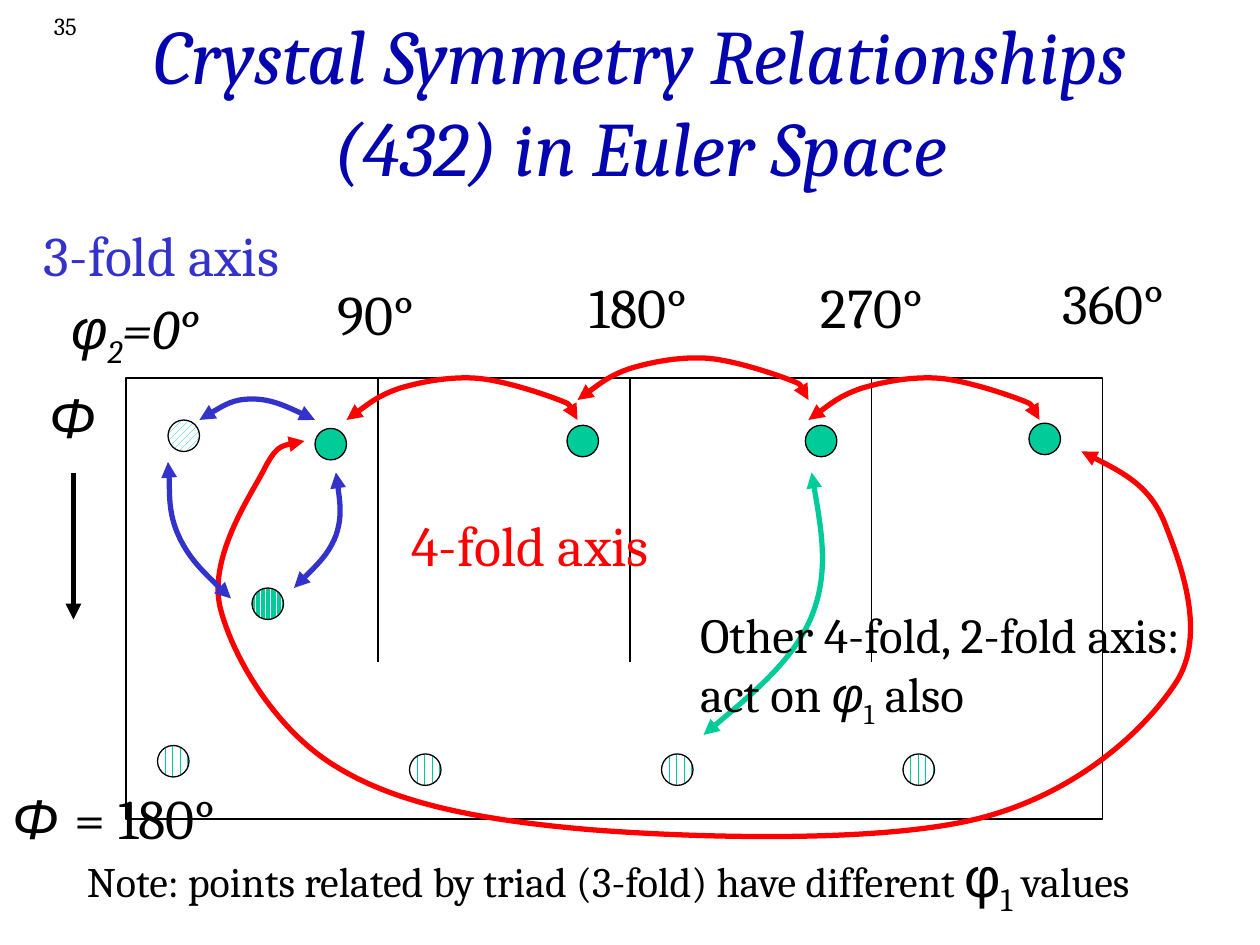
from lxml.etree import SubElement
from pptx import Presentation
from pptx.dml.color import RGBColor
from pptx.enum.dml import MSO_PATTERN
from pptx.enum.shapes import MSO_CONNECTOR, MSO_SHAPE
from pptx.enum.text import MSO_ANCHOR, MSO_AUTO_SIZE, PP_ALIGN
from pptx.oxml.ns import qn
from pptx.util import Inches, Pt

COLORS = {"black": "000000", "title": "0405AE", "fourfold": "FF0000",
          "threefold": "3333CC", "point": "00CC99", "white": "FFFFFF"}
SERIF, SANS = "Cambria", "Arial"
CELL = Inches(10) / 120  # the slide is a grid of 120 columns by 90 rows

# One hop of the 4-fold axis, relative to its start: a start, then Bezier triples
HOP = [(0, 0), (1.5, -1.1), (3, -2.3), (5, -3), (7, -3.6), (9.5, -4.1), (12, -4),
       (14.5, -3.9), (18.4, -2.6), (20, -2), (21.6, -1.4), (21.8, -0.6), (22, 0)]
HOP_STARTS = [(33, 40), (55, 38.1), (77, 40)]
RETURN_LOOP = [(103, 43), (106.2, 44.6), (109.6, 46.3), (111, 50), (112.4, 53.6),
               (115, 60.4), (112, 65), (109, 69.6), (102.4, 75.7), (93, 78),
               (83.6, 80.3), (66.1, 79.8), (56, 79), (45.8, 78.1), (37.8, 76.6),
               (32, 73), (26.2, 69.5), (22.2, 62.6), (21, 58), (19.8, 53.3),
               (23.6, 47.6), (25, 45), (26.3, 42.4), (27.7, 42.1), (29, 42)]
TRIAD = [
    [(22, 57), (20, 55.1), (18, 53.2), (17, 51), (16, 48.8), (16.2, 45.1), (16, 44)],
    [(28, 56), (29.6, 54.4), (31.3, 52.8), (32, 51), (32.6, 49.2), (32.3, 47), (32, 45)],
    [(19, 40), (20.6, 39), (22.2, 38), (24, 38), (25.8, 38), (28, 39), (30, 40)],
]
OTHER_AXIS = [(67, 70), (71.3, 66.4), (75.6, 62.8), (77.3, 58.7),
              (79, 54.5), (78.1, 49.7), (77.3, 45)]


def grid(*cells):
    return [round(cell * CELL) for cell in cells]


def rgb(name):
    return RGBColor.from_string(COLORS[name])


def set_line(item, color, width):
    item.line.color.rgb = rgb(color)
    item.line.width = Pt(width)


def add_arrowheads(item, *ends):
    outline = item._element.spPr.find(qn("a:ln"))
    for end in ends:
        SubElement(outline, qn(f"a:{end}"), type="triangle")


def add_run(paragraph, text, size, color="black", font=SERIF, italic=False, sub=False):
    run = paragraph.add_run()
    run.text = text
    run.font.size = Pt(size)
    run.font.name = font
    run.font.italic = italic
    run.font.color.rgb = rgb(color)
    if sub:
        run._r.get_or_add_rPr().set("baseline", "-25000")


def add_label(slide, box, *runs):
    """Each run is (text, size, options); None is a line break."""
    frame = slide.shapes.add_textbox(*grid(*box)).text_frame
    frame.word_wrap = False
    frame.auto_size = MSO_AUTO_SIZE.SHAPE_TO_FIT_TEXT
    paragraph = frame.paragraphs[0]
    for run in runs:
        if run is None:
            paragraph.add_line_break()
        else:
            text, size, options = run
            add_run(paragraph, text, size, **options)
    return paragraph


def add_straight(slide, start, end, width=0.75):
    line = slide.shapes.add_connector(MSO_CONNECTOR.STRAIGHT, *grid(*start, *end))
    set_line(line, "black", width)
    SubElement(line._element.spPr, qn("a:effectLst"))
    return line


def add_point(slide, left, top, pattern=None):
    point = slide.shapes.add_shape(MSO_SHAPE.OVAL, *grid(left, top, 3, 3))
    point.shadow.inherit = False
    set_line(point, "black", 0.75)
    if pattern is None:
        point.fill.solid()
    else:
        point.fill.patterned()
        point.fill.pattern = pattern
        point.fill.back_color.rgb = rgb("white")
    point.fill.fore_color.rgb = rgb("point")


def add_curve(slide, nodes, color):
    """Draw a double-headed curve; every three nodes after the first are one Bezier."""
    start, *rest = [grid(*node) for node in nodes]
    builder = slide.shapes.build_freeform(*start)
    builder.add_line_segments(rest, close=False)
    curve = builder.convert_to_shape()
    curve.shadow.inherit = False
    curve.fill.background()
    set_line(curve, color, 3)
    add_arrowheads(curve, "headEnd", "tailEnd")
    # Turn the straight segments into cubic ones
    outline = curve._element.spPr.find(".//" + qn("a:path"))
    segments = outline.findall(qn("a:lnTo"))
    for first in range(0, len(segments), 3):
        bezier = SubElement(outline, qn("a:cubicBezTo"))
        for segment in segments[first:first + 3]:
            bezier.append(segment[0])
            outline.remove(segment)


def add_heading(slide):
    number = add_label(slide, (0.5, 0.5, 8, 4), ("35", 14, {}))
    number.alignment = PP_ALIGN.RIGHT
    title = slide.shapes.title
    title.left, title.top, title.width, title.height = grid(10, 2, 102, 15)
    frame = title.text_frame
    frame.word_wrap = True
    frame.auto_size = MSO_AUTO_SIZE.NONE
    frame.vertical_anchor = MSO_ANCHOR.MIDDLE
    frame.paragraphs[0].alignment = PP_ALIGN.CENTER
    add_run(frame.paragraphs[0], "Crystal Symmetry Relationships (432) in Euler Space",
            44, "title", italic=True)


def add_euler_frame(slide):
    section = slide.shapes.add_shape(MSO_SHAPE.RECTANGLE, *grid(12, 36, 93, 42))
    section.shadow.inherit = False
    section.fill.background()
    set_line(section, "black", 0.75)
    for column in (36, 60, 83):
        add_straight(slide, (column, 36), (column, 63))
    phi_arrow = add_straight(slide, (7, 45), (7, 59), 3)
    add_arrowheads(phi_arrow, "tailEnd")


def add_labels(slide):
    greek = {"font": SANS, "italic": True}
    # Angles along the axes
    add_label(slide, (5.6, 27.4, 16.4, 7.7), ("φ", 32, greek),
              ("2", 32, {"italic": True, "sub": True}), ("=0°", 32, {"italic": True}))
    for angle, left, top, width in (("90°", 31, 26, 10.4), ("180°", 55, 25.4, 13.4),
                                    ("270°", 77, 25.4, 13.4), ("360°", 100, 25, 13.4)):
        add_label(slide, (left, top, width, 7.7), (angle, 32, {}))
    add_label(slide, (3.5, 35.8, 6.5, 7.6), ("Φ", 32, greek))
    add_label(slide, (0, 74, 23, 7.7), ("Φ\u00a0", 32, greek), ("=\u00a0180°", 32, {}))
    # Names of the axes
    add_label(slide, (38, 48, 26.4, 7.7), ("4-fold axis", 32, {"color": "fourfold"}))
    add_label(slide, (3, 20.4, 26.4, 7.7), ("3-fold axis", 32, {"color": "threefold"}))
    add_label(slide, (65.5, 57, 51.1, 12.5), ("Other 4-fold, 2-fold axis:", 28, {}), None,
              ("act on ", 28, {}), ("φ", 28, greek), ("1", 28, {"sub": True}),
              (" also", 28, {}))
    # Note
    add_label(slide, (7.1, 79.6, 110.9, 7.7),
              ("Note: points related by triad (3-fold) have different ", 24, {}),
              ("φ", 32, {"font": SANS}), ("1", 32, {"sub": True}), (" values", 24, {}))


def main():
    deck = Presentation()
    deck.slide_width, deck.slide_height = Inches(10), Inches(7.5)
    slide = deck.slides.add_slide(deck.slide_layouts[5])
    add_heading(slide)
    add_euler_frame(slide)

    # Symmetry-related points
    for left, top in ((30, 40.8), (54, 40.5), (76.7, 40.5), (98, 40.3)):
        add_point(slide, left, top)
    add_point(slide, 24, 56, MSO_PATTERN.DARK_VERTICAL)
    add_point(slide, 16, 40, MSO_PATTERN.WIDE_UPWARD_DIAGONAL)
    for left, top in ((15, 71), (39, 71.8), (63, 71.8), (86, 71.8)):
        add_point(slide, left, top, MSO_PATTERN.DASHED_VERTICAL)

    # Symmetry operations
    for x, y in HOP_STARTS:
        add_curve(slide, [(x + dx, y + dy) for dx, dy in HOP], "fourfold")
    add_curve(slide, RETURN_LOOP, "fourfold")
    for side in TRIAD:
        add_curve(slide, side, "threefold")
    add_curve(slide, OTHER_AXIS, "point")

    add_labels(slide)
    deck.save("out.pptx")


if __name__ == "__main__":
    main()
